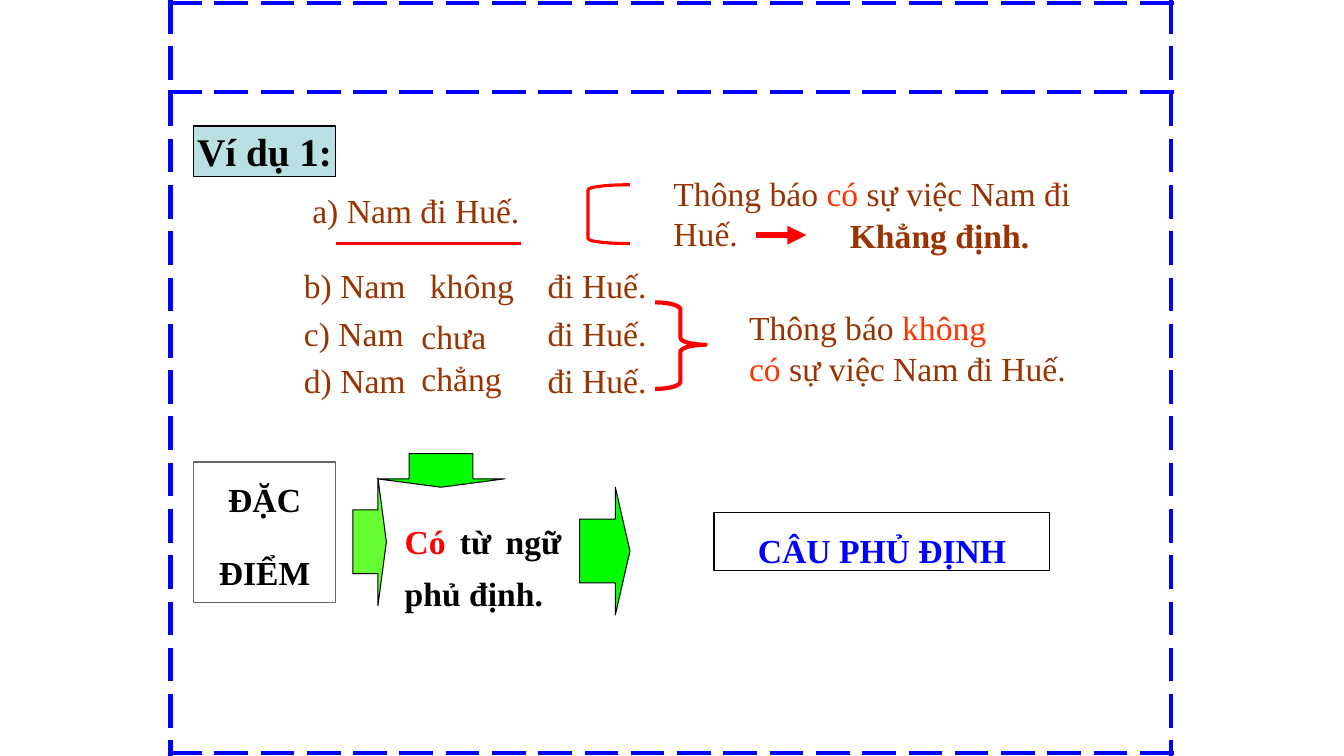
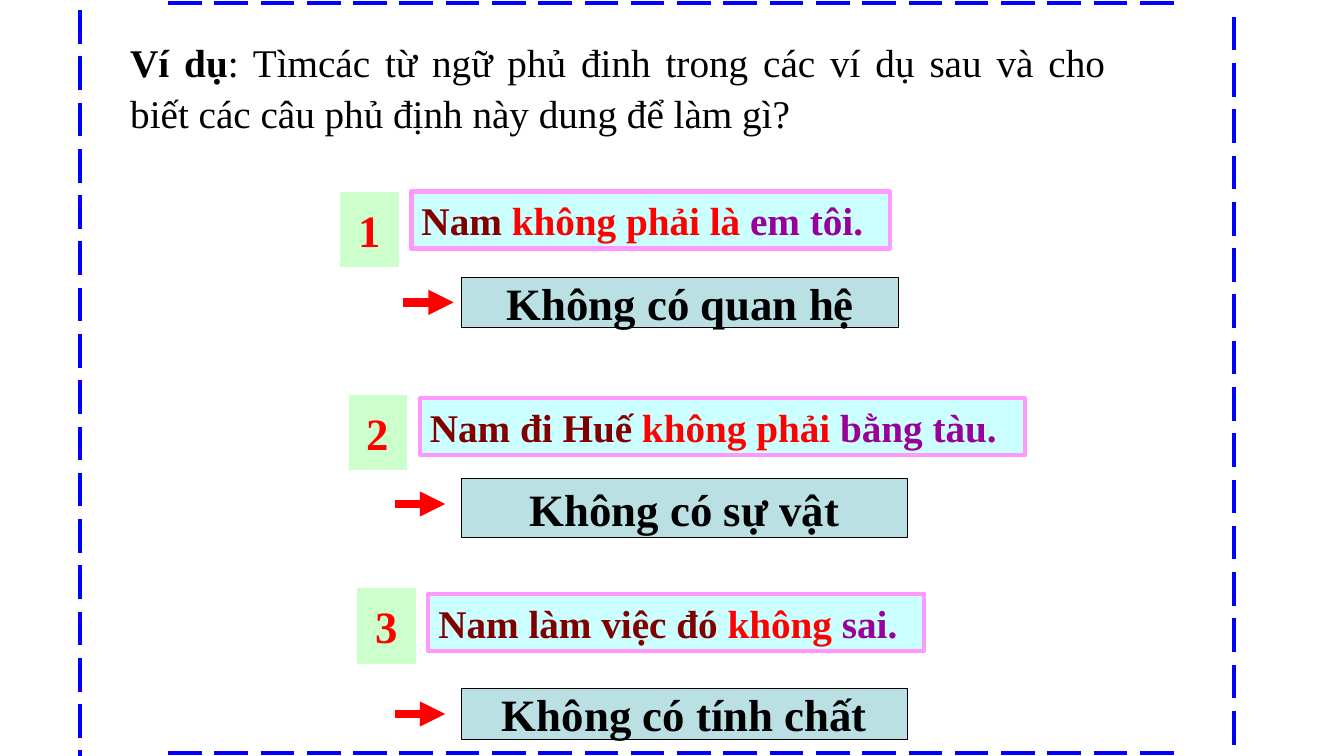
from dataclasses import dataclass

from lxml.etree import SubElement
from pptx import Presentation
from pptx.dml.color import RGBColor
from pptx.enum.dml import MSO_LINE
from pptx.enum.shapes import MSO_CONNECTOR, MSO_SHAPE
from pptx.enum.text import MSO_ANCHOR, MSO_AUTO_SIZE, PP_ALIGN
from pptx.oxml.ns import qn
from pptx.util import Inches, Pt

COLS, ROWS = 160, 90
WIDE, HIGH = Inches(13.33), Inches(7.5)


@dataclass(frozen=True)
class Theme:
    font: str = "Times New Roman"
    body: int = 24
    head: int = 28
    large: int = 32
    black: str = "000000"
    blue: str = "0000FF"
    brown: str = "993300"
    maroon: str = "800000"
    orange: str = "FF3300"
    red: str = "FF0000"
    purple: str = "990099"
    pink: str = "FF99FF"
    gray: str = "666666"
    teal: str = "BBE0E3"
    cyan: str = "CCFFFF"
    mint: str = "CCFFCC"
    green: str = "00FF00"
    lime: str = "66FF33"


T = Theme()


def col(n):
    return round(WIDE * n / COLS)


def row(n):
    return round(HIGH * n / ROWS)


def area(x, y, w, h):
    return col(x), row(y), col(w), row(h)


def rgb(code):
    return RGBColor.from_string(code)


def write(shape, paras, size=T.body, bold=False, align=PP_ALIGN.LEFT,
          mid=False, wrap=True, lead=1.0, gap=0, tab=None):
    """Fill a shape; each paragraph is a list of (text, colour[, bold]) runs."""
    frame = shape.text_frame
    frame.auto_size = MSO_AUTO_SIZE.NONE
    frame.word_wrap = wrap
    frame.vertical_anchor = MSO_ANCHOR.MIDDLE if mid else MSO_ANCHOR.TOP
    for i, runs in enumerate(paras):
        para = frame.add_paragraph() if i else frame.paragraphs[0]
        para.alignment = align
        para.line_spacing = lead
        para.space_before = Pt(gap if i else 0)
        if tab:
            stops = SubElement(para._p.get_or_add_pPr(), qn("a:tabLst"))
            SubElement(stops, qn("a:tab"), pos=str(col(tab)), algn="l")
        for text, color, *own in runs:
            if text == "\n":
                para.add_line_break()
                continue
            run = para.add_run()
            run.text = text
            font = run.font
            font.name, font.size = T.font, Pt(size)
            font.bold = own[0] if own else bold
            font.color.rgb = rgb(color)


def paint(shape, fill=None, line=None, width=0.75):
    if fill:
        shape.fill.solid()
        shape.fill.fore_color.rgb = rgb(fill)
    else:
        shape.fill.background()
    if line:
        shape.line.color.rgb = rgb(line)
        shape.line.width = Pt(width)
    else:
        shape.line.fill.background()


def label(slide, box, paras, **style):
    write(slide.shapes.add_textbox(*area(*box)), paras, **style)


def block(slide, box, kind=MSO_SHAPE.RECTANGLE, adj=(), **look):
    shape = slide.shapes.add_shape(kind, *area(*box))
    shape.shadow.inherit = False
    for i, part in enumerate(adj):
        shape.adjustments[i] = part
    paint(shape, **look)
    return shape


def rule(slide, start, end, color, width, dash=False, arrow=False):
    line = slide.shapes.add_connector(
        MSO_CONNECTOR.STRAIGHT, col(start[0]), row(start[1]), col(end[0]), row(end[1]))
    line.line.color.rgb = rgb(color)
    line.line.width = Pt(width)
    if dash:
        line.line.dash_style = MSO_LINE.LONG_DASH
    if arrow:
        SubElement(line.line._get_or_add_ln(), qn("a:tailEnd"), type="triangle")
    SubElement(line._element.spPr, qn("a:effectLst"))


def border(slide, sides, levels=()):
    """Draw the dashed frame; sides are (column, top row)."""
    for x, top in sides:
        rule(slide, (x, top), (x, ROWS), T.blue, 3, dash=True)
    for y in (0.4, *levels, 89.6):
        rule(slide, (20, y), (140, y), T.blue, 3, dash=True)


def head(slide, box, runs, **style):
    title = slide.shapes.title
    title.left, title.top, title.width, title.height = area(*box)
    write(title, [runs], size=T.head, **style)
    return title


def negate(slide):
    """Compare the plain sentence with the negated ones."""
    border(slide, [(20.3, 0), (139.4, 0)], levels=[11])
    title = head(slide, (23, 15, 17, 6), [("Ví dụ 1:", T.black)], bold=True,
                 align=PP_ALIGN.CENTER, mid=True, wrap=False)
    title.text_frame.margin_left = title.text_frame.margin_right = 0
    paint(title, T.teal, T.black)

    label(slide, (36, 22, 44, 6), [[("a) Nam đi Huế.", T.brown)]])
    rule(slide, (40, 29), (62, 29), T.red, 2.25)
    label(slide, (35, 31, 64, 18),
          [[(f"{mark}) Nam\tđi Huế.", T.brown)] for mark in "bcd"], gap=5, tab=29)
    for word, x, y in (("không", 50, 31), ("chưa", 49, 37), ("chẳng", 49, 42)):
        label(slide, (x, y, 21, 6), [[(word, T.brown)]])

    block(slide, (70, 22, 5, 7), MSO_SHAPE.LEFT_BRACKET, [0.12], line=T.red, width=2.25)
    label(slide, (79, 20, 57, 11), [[("Thông báo ", T.brown), ("có", T.orange),
                                     (" sự việc Nam đi Huế.", T.brown)]])
    rule(slide, (90, 28), (96, 28), T.red, 4.5, arrow=True)
    label(slide, (100, 25, 26, 6), [[("Khẳng định.", T.brown)]], bold=True)
    block(slide, (78, 36, 6, 10.3), MSO_SHAPE.RIGHT_BRACE, [0.14, 0.49],
          line=T.red, width=3)
    label(slide, (88, 36, 52, 11), [[("Thông báo ", T.brown), ("không", T.orange),
                                     ("\n", T.orange), ("có ", T.orange),
                                     ("sự việc Nam đi Huế.", T.brown)]])

    loose = dict(bold=True, lead=1.3, gap=14.5)
    trait = block(slide, (23, 55, 17, 16.7), line=T.gray)
    write(trait, [[("ĐẶC", T.black)], [("ĐIỂM", T.black)]],
          align=PP_ALIGN.CENTER, **loose)
    label(slide, (47, 60, 21, 13.7), [[("Có", T.red), (" từ ngữ phủ định.", T.black)]],
          align=PP_ALIGN.JUSTIFY, **loose)
    name = block(slide, (85, 61, 40, 6.9), line=T.black)
    write(name, [[("CÂU PHỦ ĐỊNH", T.blue)]], align=PP_ALIGN.CENTER, **loose)

    for box, kind, tip, fill in (
            ((44.9, 54, 15.2, 4), MSO_SHAPE.DOWN_ARROW, 0.25, T.green),
            ((69, 58, 6, 15.2), MSO_SHAPE.RIGHT_ARROW, 0.29, T.green),
            ((42, 56.9, 4, 15.2), MSO_SHAPE.RIGHT_ARROW, 0.25, T.lime)):
        block(slide, box, kind, [0.5, tip], fill=fill, line=T.black)


def sample(slide, num, spot, wide, drop, parts, answer, reply):
    """Place a numbered sentence, and below it an arrow to its answer."""
    x, y = spot
    top, span, tall, start = answer
    center = dict(size=T.large, bold=True, align=PP_ALIGN.CENTER, mid=True, wrap=False)
    badge = block(slide, (x, y, 7, 9), MSO_SHAPE.ACTION_BUTTON_CUSTOM, fill=T.mint)
    write(badge, [[(str(num), T.red)]], **center)
    line = block(slide, (x + 8.5, y + drop, wide, 6.8),
                 fill=T.cyan, line=T.pink, width=3)
    write(line, [list(zip(parts, (T.maroon, T.red, T.purple)))], size=T.head, bold=True)
    note = block(slide, (55, top, span, tall), fill=T.teal, line=T.black)
    write(note, [[(reply, T.black)]], **center)
    level = top + 3
    rule(slide, (start, level), (start + 6, level), T.red, 6, arrow=True)


def quiz(slide):
    border(slide, [(9.5, 1.2), (146.9, 2)])
    head(slide, (14.3, 3.6, 118.5, 13),
         [("Ví dụ", T.black, True),
          (": Tìmcác từ ngữ phủ đinh trong các ví dụ sau và cho biết "
           "các câu phủ định này dung để làm gì?", T.black)],
         align=PP_ALIGN.JUSTIFY, lead=1.07)
    items = (
        ((40.5, 22.8), 57, 0, ("Nam ", "không phải là ", "em tôi."),
         (33, 52, 6, 48), "Không có quan hệ"),
        ((41.5, 47), 72, 0.4, ("Nam đi Huế ", "không phải ", "bằng tàu."),
         (57, 53, 7, 47), "Không có sự vật"),
        ((42.5, 70), 59, 0.7, ("Nam làm việc đó ", "không ", "sai."),
         (82, 53, 6, 47), "Không có tính chất"),
    )
    for num, item in enumerate(items, 1):
        sample(slide, num, *item)


def main():
    deck = Presentation()
    deck.slide_width, deck.slide_height = WIDE, HIGH
    for build in (negate, quiz):
        build(deck.slides.add_slide(deck.slide_layouts[5]))
    deck.save("out.pptx")


if __name__ == "__main__":
    main()
